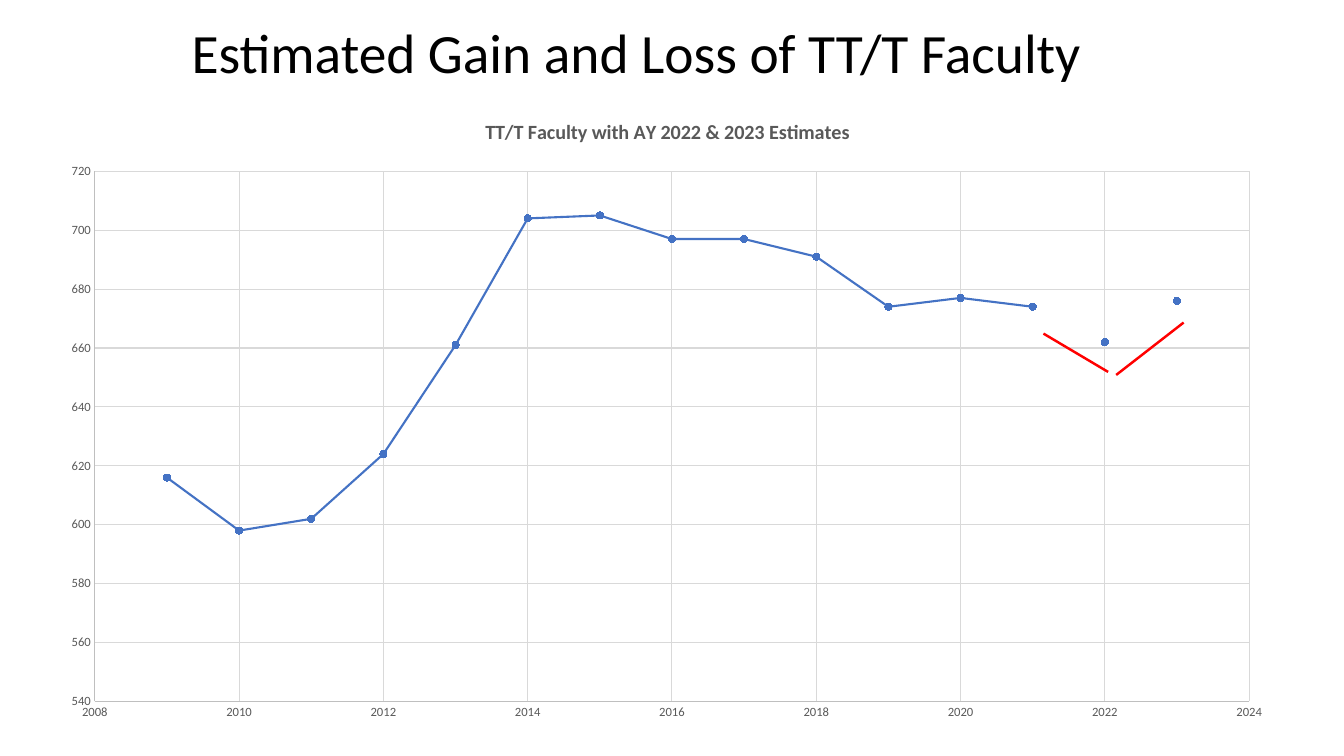
"""Build a slide that charts faculty counts with two estimated years."""
from lxml import etree
from pptx import Presentation
from pptx.chart.data import XyChartData
from pptx.dml.color import RGBColor
from pptx.enum.chart import XL_CHART_TYPE, XL_MARKER_STYLE, XL_TICK_MARK
from pptx.enum.shapes import MSO_CONNECTOR
from pptx.enum.text import MSO_ANCHOR, MSO_AUTO_SIZE, PP_ALIGN
from pptx.oxml import parse_xml
from pptx.oxml.ns import nsdecls, qn
from pptx.util import Inches, Pt

SCATTER = XL_CHART_TYPE.XY_SCATTER_LINES
CIRCLE = XL_MARKER_STYLE.CIRCLE
NO_TICK = XL_TICK_MARK.NONE
STRAIGHT = MSO_CONNECTOR.STRAIGHT
MIDDLE = MSO_ANCHOR.MIDDLE
LEFT = PP_ALIGN.LEFT
NO_FIT = MSO_AUTO_SIZE.NONE

COLOURS = {"title": "000000", "label": "595959", "axis": "BFBFBF",
           "grid": "D9D9D9", "series": "4472C4", "trend": "FF0000"}
COUNTS = [616, 598, 602, 624, 661, 704, 705, 697, 697, 691, 674, 677, 674]
GAP = (None, None)
POINTS = [*enumerate(COUNTS, 2009), GAP, (2022, 662), GAP, (2023, 676)]
PLOT_SHARES = {"x": 0.47 / 12.3, "y": 0.74 / 6.3, "w": 11.45 / 12.3, "h": 5.26 / 6.3}


class FacultySlide:
    """Hold the style and the page, measured in percent of the slide."""

    def __init__(self, deck, page, typeface):
        self.deck, self.page, self.typeface = deck, page, typeface

    def place(self, column, row):
        return (round(self.deck.slide_width * column / 100),
                round(self.deck.slide_height * row / 100))

    def style_font(self, font, size, colour, bold=False):
        font.name, font.size, font.bold = self.typeface, Pt(size), bold
        font.color.rgb = RGBColor.from_string(COLOURS[colour])

    def style_line(self, line, width, colour):
        line.width = Pt(width)
        line.color.rgb = RGBColor.from_string(COLOURS[colour])

    def title(self, text, start, size):
        box = self.page.shapes.title
        box.left, box.top = self.place(*start)
        box.width, box.height = self.place(*size)
        frame = box.text_frame
        frame.text = text
        frame.auto_size, frame.vertical_anchor = NO_FIT, MIDDLE
        para = frame.paragraphs[0]
        para.alignment, para.line_spacing = LEFT, 0.9
        self.style_font(para.font, 39.6, "title")

    def axis(self, axis, low, high, step):
        axis.minimum_scale, axis.maximum_scale, axis.major_unit = low, high, step
        axis.major_tick_mark = axis.minor_tick_mark = NO_TICK
        axis.has_major_gridlines = True
        self.style_line(axis.major_gridlines.format.line, 0.75, "grid")
        self.style_line(axis.format.line, 0.75, "axis")
        self.style_font(axis.tick_labels.font, 9, "label")

    def scatter(self, heading, points, start, size):
        data = XyChartData()
        counts = data.add_series("Series 1")
        for year, count in points:
            counts.add_data_point(year, count)
        chart = self.page.shapes.add_chart(
            SCATTER, *self.place(*start), *self.place(*size), data).chart
        self.style_font(chart.font, 10, "title")
        chart.has_legend = False
        chart.has_title = True
        chart.chart_title.include_in_layout = False
        chart.chart_title.text_frame.text = heading
        para = chart.chart_title.text_frame.paragraphs[0]
        self.style_font(para.font, 14.4, "label", bold=True)
        self.axis(chart.category_axis, 2008, 2024, 2)
        self.axis(chart.value_axis, 540, 720, 20)
        self.series(chart.plots[0])
        self.layout(chart)

    def series(self, plot):
        plot.vary_by_categories = False
        series = plot.series[0]
        series.smooth = False
        self.style_line(series.format.line, 1.5, "series")
        series.marker.style, series.marker.size = CIRCLE, 5
        fill = series.marker.format.fill
        fill.solid()
        fill.fore_color.rgb = RGBColor.from_string(COLOURS["series"])
        self.style_line(series.marker.format.line, 0.75, "series")
        for point in list(series._element.iter(qn("c:pt"))):
            if point.findtext(qn("c:v")) == "None":
                point.getparent().remove(point)

    def layout(self, chart):
        area = chart._chartSpace.find(".//" + qn("c:plotArea"))
        for old in area.findall(qn("c:layout")):
            area.remove(old)
        shares = "".join(f'<c:{key} val="{share}"/>' for key, share in PLOT_SHARES.items())
        area.insert(0, parse_xml(
            f'<c:layout {nsdecls("c")}><c:manualLayout><c:layoutTarget val="inner"/>'
            f'<c:xMode val="edge"/><c:yMode val="edge"/>{shares}'
            '</c:manualLayout></c:layout>'))

    def trend(self, start, end):
        connector = self.page.shapes.add_connector(
            STRAIGHT, *self.place(*start), *self.place(*end))
        self.style_line(connector.line, 1.75, "trend")
        etree.SubElement(connector._element.spPr, qn("a:effectLst"))


def main():
    deck = Presentation()
    deck.slide_width, deck.slide_height = Inches(13.33), Inches(7.5)
    page = deck.slides.add_slide(deck.slide_layouts[5])
    slide = FacultySlide(deck, page, "Calibri")
    slide.title("Estimated Gain and Loss of TT/T Faculty", (13.5, 3.2), (79.37, 8.4))
    slide.scatter("TT/T Faculty with AY 2022 & 2023 Estimates", POINTS,
                  (3.53, 12.8), (92.27, 84))
    slide.trend((77.64, 44.13), (82.45, 49.2))
    slide.trend((83.05, 49.6), (88.07, 42.67))
    deck.save("out.pptx")


if __name__ == "__main__":
    main()
